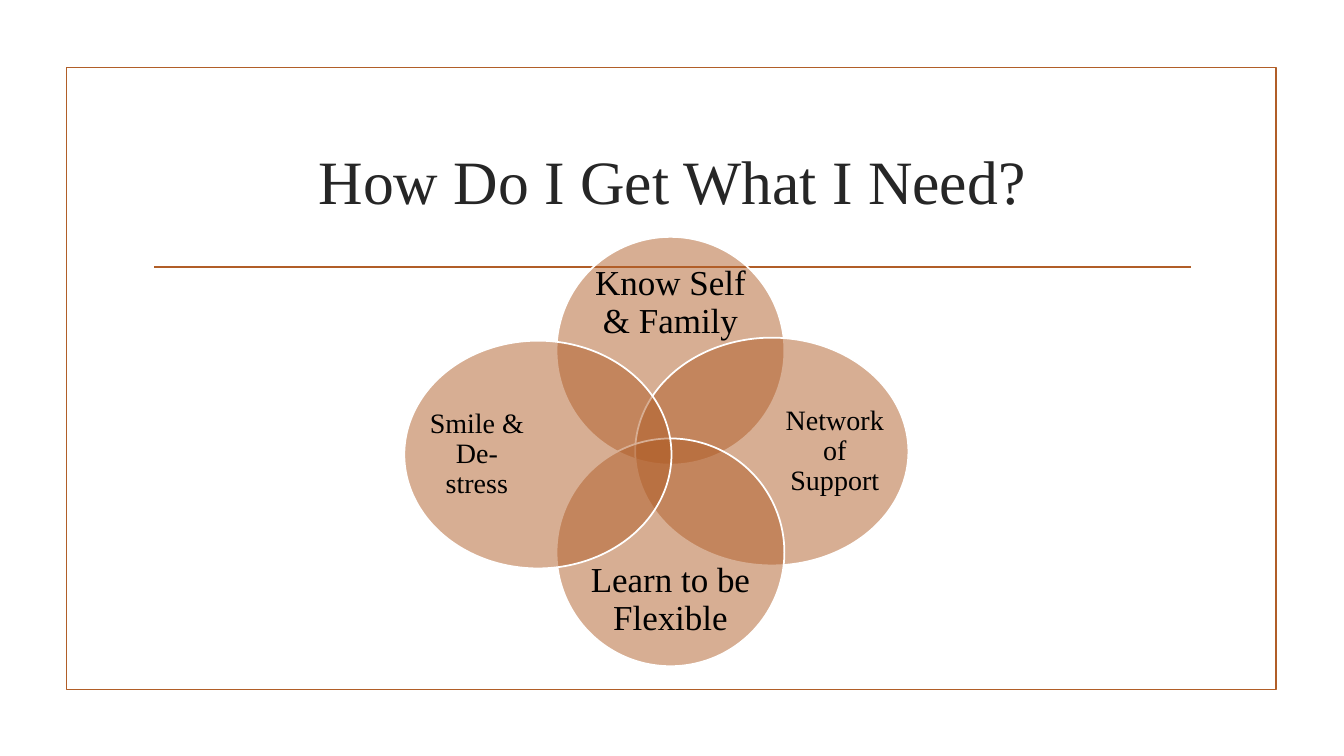
from lxml import etree
from pptx import Presentation
from pptx.dml.color import RGBColor
from pptx.enum.shapes import MSO_CONNECTOR, MSO_SHAPE
from pptx.enum.text import MSO_ANCHOR, PP_ALIGN
from pptx.oxml.ns import qn
from pptx.util import Inches, Pt

RUST = "B15E28"
FRAME_MARGIN = {"margin_left": 0, "margin_top": 0, "margin_right": 0, "margin_bottom": 0}


def color(value):
    return RGBColor.from_string(value)


def add_label(words, place, size, ink, frame_format, spacing):
    label = slide.shapes.add_textbox(*map(Inches, place))
    frame = label.text_frame
    frame_format = {"word_wrap": True, "vertical_anchor": MSO_ANCHOR.MIDDLE, **frame_format}
    for name, value in frame_format.items():
        setattr(frame, name, value)
    paragraph = frame.paragraphs[0]
    paragraph.text = words
    paragraph.alignment = PP_ALIGN.CENTER
    paragraph.line_spacing = spacing
    font = paragraph.runs[0].font
    for name, value in {"name": "Times New Roman", "size": Pt(size)}.items():
        setattr(font, name, value)
    font.color.rgb = color(ink)


deck = Presentation()
deck.slide_width = Inches(13.33)
deck.slide_height = Inches(7.5)
slide = deck.slides.add_slide(deck.slide_layouts[6])

border = slide.shapes.add_shape(
    MSO_SHAPE.RECTANGLE, Inches(0.66), Inches(0.67), Inches(12), Inches(6.17))
border.shadow.inherit = False
border.fill.background()

divider = slide.shapes.add_connector(
    MSO_CONNECTOR.STRAIGHT, Inches(1.53), Inches(2.65), Inches(11.81), Inches(2.65))
etree.SubElement(divider._element.spPr, qn("a:effectLst"))

for part in (border, divider):
    part.line.color.rgb = color(RUST)
    part.line.width = Pt(1.25)

add_label("How Do I Get What I Need?", (1.42, 1.07, 10.5, 1.43), 44, "262626", {}, 1.0)

PETAL_HEIGHT = 2.26
petals = [
    ("Know Self & Family", (5.52, 2.35, 2.26), (5.78, 2.65, 1.74, 0.72), 25),
    ("Network of Support", (6.3, 3.35, 2.71), (7.76, 3.61, 1.04, 1.74), 20),
    ("Learn to be Flexible", (5.52, 4.35, 2.26), (5.78, 5.59, 1.74, 0.72), 25),
    ("Smile & De-stress", (4.01, 3.38, 2.65), (4.22, 3.64, 1.02, 1.74), 20),
]
for words, outline, label_place, size in petals:
    petal = slide.shapes.add_shape(
        MSO_SHAPE.OVAL, *map(Inches, (*outline, PETAL_HEIGHT)))
    petal.shadow.inherit = False
    petal.fill.solid()
    petal.fill.fore_color.rgb = color(RUST)
    tint = petal._element.spPr.find(qn("a:solidFill")).find(qn("a:srgbClr"))
    etree.SubElement(tint, qn("a:alpha")).set("val", "50000")
    petal.line.color.rgb = color("FFFFFF")
    petal.line.width = Pt(1.25)
    add_label(words, label_place, size, "000000", FRAME_MARGIN, 0.9)

deck.save("out.pptx")
